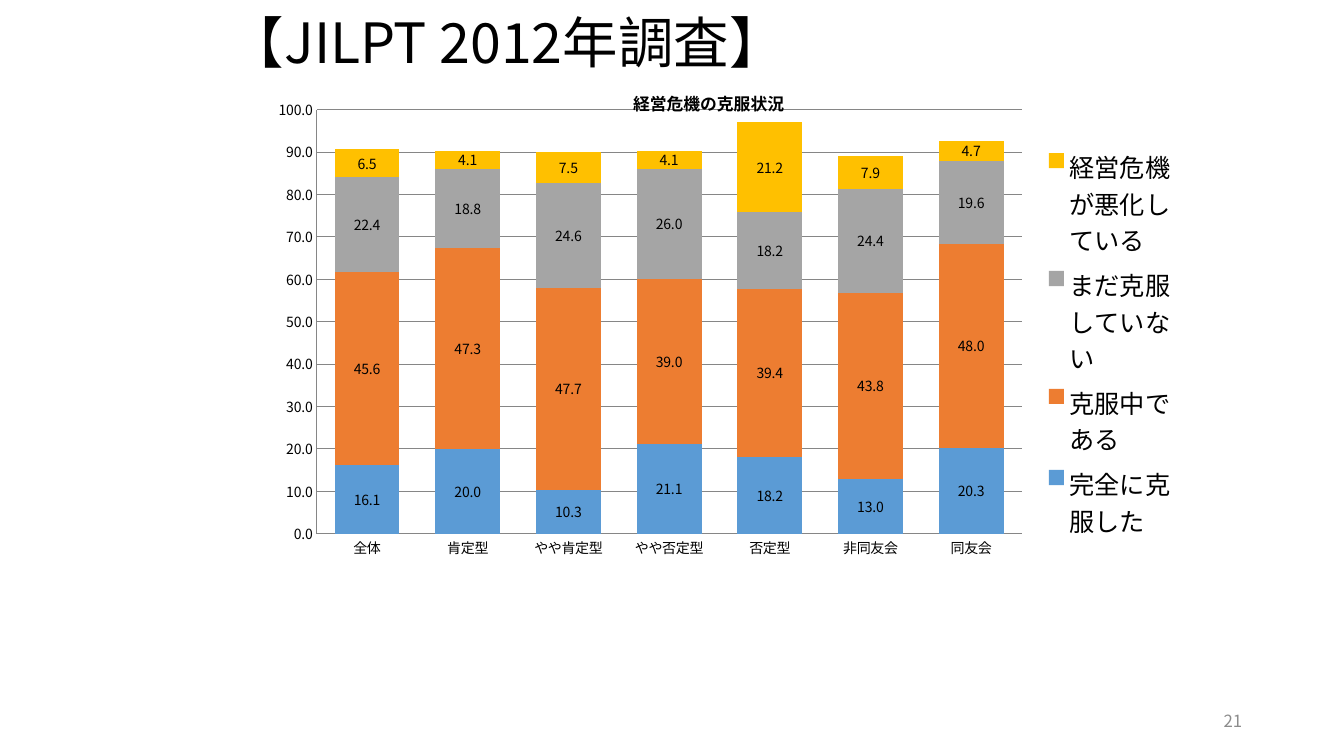
from dataclasses import dataclass

from lxml.etree import SubElement
from pptx import Presentation
from pptx.chart.data import CategoryChartData
from pptx.dml.color import RGBColor
from pptx.enum.chart import XL_CHART_TYPE, XL_LABEL_POSITION, XL_LEGEND_POSITION, XL_TICK_MARK
from pptx.enum.text import MSO_ANCHOR, MSO_AUTO_SIZE, PP_ALIGN
from pptx.oxml.ns import qn
from pptx.util import Inches, Pt

TITLE = "【JILPT 2012年調査】"
PAGE_NUMBER = "21"
CHART_TITLE = "経営危機の克服状況"
GROUPS = ["全体", "肯定型", "やや肯定型", "やや否定型", "否定型", "非同友会", "同友会"]
SERIES = [
    ("完全に克服した", "5B9BD5", [16.1, 20.0, 10.3, 21.1, 18.2, 13.0, 20.3]),
    ("克服中である", "ED7D31", [45.6, 47.3, 47.7, 39.0, 39.4, 43.8, 48.0]),
    ("まだ克服していない", "A5A5A5", [22.4, 18.8, 24.6, 26.0, 18.2, 24.4, 19.6]),
    ("経営危機が悪化している", "FFC000", [6.5, 4.1, 7.5, 4.1, 21.2, 7.9, 4.7]),
]
VALUE_FORMAT = "0.0"

# left, top, width, height in inches
TITLE_BOX = (2.17, 0.3, 9, 0.3)
CHART_BOX = (2.17, 0.6, 9.71, 6.1)
NUMBER_BOX = (9.42, 6.95, 3, 0.4)
# fractions of the chart
PLOT_AREA = {"x": 0.1, "y": 0.08, "w": 0.72, "h": 0.69}
LEGEND_AREA = {"x": 0.84, "y": 0.13, "w": 0.14, "h": 0.66}
CHART_TITLE_SPOT = {"x": 0.42, "y": 0.04}


@dataclass(frozen=True)
class Theme:
    font: str = "Noto Sans CJK JP"
    ink: str = "000000"
    muted: str = "8C8C8C"
    rule: str = "868686"
    title: float = 39.6
    legend: float = 18
    small: float = 12
    label: float = 10


THEME = Theme()


def style_font(font, size, color=THEME.ink, bold=False):
    font.name = THEME.font
    font.size = Pt(size)
    font.bold = bold
    font.color.rgb = RGBColor.from_string(color)


def write_line(frame, text, size, color, alignment):
    frame.text = text
    frame.word_wrap = True
    frame.auto_size = MSO_AUTO_SIZE.NONE
    frame.vertical_anchor = MSO_ANCHOR.MIDDLE
    para = frame.paragraphs[0]
    para.alignment = alignment
    style_font(para.runs[0].font, size, color)
    return para


def set_layout(root, part_tag, area, after=None, inner=False):
    """Place the first part_tag by fractions, following its child named in after."""
    part = next(root.iter(qn(part_tag)))
    for old in part.findall(qn("c:layout")):
        part.remove(old)
    layout = SubElement(part, qn("c:layout"))
    manual = SubElement(layout, qn("c:manualLayout"))
    settings = {"layoutTarget": "inner"} if inner else {}
    settings.update({"xMode": "edge", "yMode": "edge"}, **area)
    for tag, value in settings.items():
        SubElement(manual, qn(f"c:{tag}")).set("val", str(value))
    if after:
        part.find(qn(after)).addnext(layout)
    else:
        part.insert(0, layout)


def add_east_asian_font(root):
    for latin in list(root.iter(qn("a:latin"))):
        east_asian = SubElement(latin.getparent(), qn("a:ea"))
        east_asian.set("typeface", THEME.font)
        latin.addnext(east_asian)


def style_axes(chart):
    chart.value_axis.minimum_scale = 0
    chart.value_axis.maximum_scale = 100
    chart.value_axis.major_unit = 10
    chart.value_axis.tick_labels.number_format = VALUE_FORMAT
    chart.value_axis.tick_labels.number_format_is_linked = False
    chart.value_axis.has_major_gridlines = True
    lines = [chart.value_axis.major_gridlines.format.line]
    for axis in (chart.category_axis, chart.value_axis):
        axis.major_tick_mark = axis.minor_tick_mark = XL_TICK_MARK.NONE
        style_font(axis.tick_labels.font, THEME.label)
        lines.append(axis.format.line)
    for line in lines:
        line.color.rgb = RGBColor.from_string(THEME.rule)
        line.width = Pt(0.75)


def style_series(plot):
    plot.gap_width = 55
    plot.overlap = 100
    plot.vary_by_categories = False
    for series, (_, color, _) in zip(plot.series, SERIES):
        series.format.fill.solid()
        series.format.fill.fore_color.rgb = RGBColor.from_string(color)
        labels = series.data_labels
        labels.show_value = True
        labels.number_format = VALUE_FORMAT
        labels.number_format_is_linked = False
        labels.position = XL_LABEL_POSITION.CENTER
        style_font(labels.font, THEME.label)


def add_recovery_chart(page):
    data = CategoryChartData(number_format=VALUE_FORMAT)
    data.categories = GROUPS
    for name, _, values in SERIES:
        data.add_series(name, values)
    frame = page.shapes.add_chart(
        XL_CHART_TYPE.COLUMN_STACKED, *map(Inches, CHART_BOX), data)
    chart = frame.chart
    style_font(chart.font, THEME.label)
    chart.has_title = True
    heading = chart.chart_title.text_frame
    heading.text = CHART_TITLE
    style_font(heading.paragraphs[0].runs[0].font, THEME.small, bold=True)
    chart.has_legend = True
    chart.legend.position = XL_LEGEND_POSITION.RIGHT
    chart.legend.include_in_layout = False
    style_font(chart.legend.font, THEME.legend)
    style_axes(chart)
    style_series(chart.plots[0])

    root = chart.element
    set_layout(root, "c:plotArea", PLOT_AREA, inner=True)
    set_layout(root, "c:legend", LEGEND_AREA, after="c:legendPos")
    set_layout(root, "c:title", CHART_TITLE_SPOT, after="c:tx")
    add_east_asian_font(root)


def main():
    deck = Presentation()
    deck.slide_width, deck.slide_height = Inches(13.33), Inches(7.5)
    page = deck.slides.add_slide(deck.slide_layouts[5])

    title = page.shapes.title
    title.left, title.top, title.width, title.height = map(Inches, TITLE_BOX)
    para = write_line(title.text_frame, TITLE, THEME.title, THEME.ink, PP_ALIGN.LEFT)
    para.line_spacing = 0.9

    number = page.shapes.add_textbox(*map(Inches, NUMBER_BOX))
    write_line(number.text_frame, PAGE_NUMBER, THEME.small, THEME.muted, PP_ALIGN.RIGHT)

    add_east_asian_font(page.element)
    add_recovery_chart(page)
    deck.save("out.pptx")


if __name__ == "__main__":
    main()
